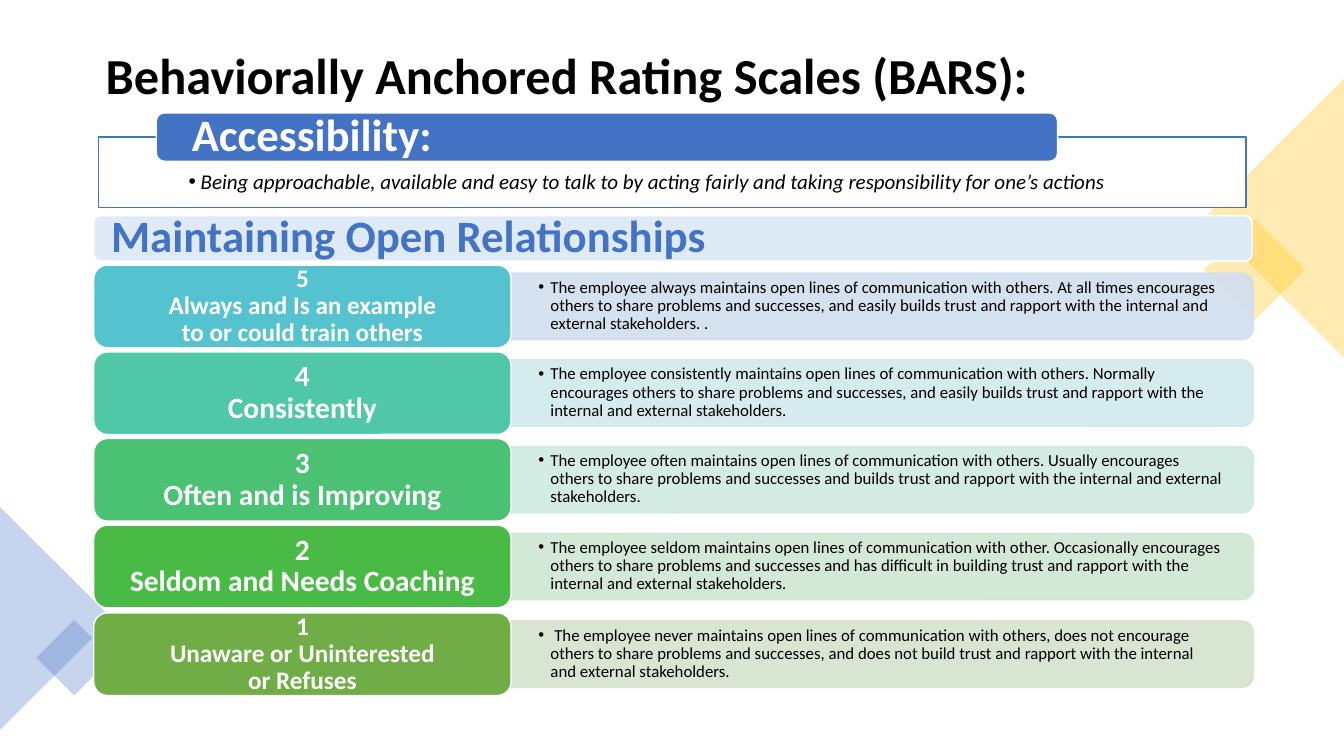
import pptx
import pptx.util
import pptx.dml.color
import pptx.enum.shapes
import pptx.enum.text
import pptx.oxml.ns
from lxml import etree

RGBColor = pptx.dml.color.RGBColor
SHAPE = pptx.enum.shapes.MSO_SHAPE
ALIGN = pptx.enum.text.PP_ALIGN
ANCHOR = pptx.enum.text.MSO_ANCHOR
qn = pptx.oxml.ns.qn

PX = 9144  # 100 px to the inch
FONT = "Calibri"

BLACK = RGBColor(0x00, 0x00, 0x00)
WHITE = RGBColor(0xFF, 0xFF, 0xFF)
BLUE = RGBColor(0x44, 0x72, 0xC4)
PALE_BLUE = RGBColor(0xDE, 0xEB, 0xF7)
GOLD = RGBColor(0xFF, 0xC0, 0x00)

# label colour, bar colour, label size, label lines, description
RATINGS = [
    (RGBColor(0x55, 0xC3, 0xCF), RGBColor(0xD2, 0xDE, 0xEF), 18,
     ["5", "Always and Is an example", "to or could train others"],
     "The employee always maintains open lines of communication with others. "
     "At all times encourages others to share problems and successes, and easily "
     "builds trust and rapport with the internal and external stakeholders. ."),
    (RGBColor(0x50, 0xC8, 0xA7), RGBColor(0xD1, 0xE9, 0xED), 21,
     ["4", "Consistently"],
     "The employee consistently maintains open lines of communication with others. "
     "Normally encourages others to share problems and successes, and easily "
     "builds trust and rapport with the internal and external stakeholders."),
    (RGBColor(0x4B, 0xC1, 0x74), RGBColor(0xD0, 0xEA, 0xE1), 21,
     ["3", "Often and is Improving"],
     "The employee often maintains open lines of communication with others. "
     "Usually encourages others to share problems and successes and "
     "builds trust and rapport with the internal and external stakeholders."),
    (RGBColor(0x4A, 0xBA, 0x46), RGBColor(0xD0, 0xE6, 0xD4), 21,
     ["2", "Seldom and Needs Coaching"],
     "The employee seldom maintains open lines of communication with other. "
     "Occasionally encourages others to share problems and successes and has difficult "
     "in building trust and rapport with the internal and external stakeholders."),
    (RGBColor(0x70, 0xAD, 0x47), RGBColor(0xD5, 0xE3, 0xCF), 18,
     ["1", "Unaware or Uninterested", "or Refuses"],
     " The employee never maintains open lines of communication with others, "
     "does not encourage others to share problems and successes, and does not "
     "build trust and rapport with the internal and external stakeholders."),
]


def emu(*lengths):
    return [pptx.util.Emu(length * PX) for length in lengths]


def set_opacity(fill_parent, percent):
    for colour in fill_parent.iter(qn("a:srgbClr")):
        etree.SubElement(colour, qn("a:alpha"), val=str(percent * 1000))


def add_shape(slide, kind, box, fill, line=None, opacity=100, rotation=0):
    shape = slide.shapes.add_shape(kind, *emu(*box))
    shape.shadow.inherit = False
    shape.rotation = rotation
    shape.fill.solid()
    shape.fill.fore_color.rgb = fill
    if opacity < 100:
        set_opacity(shape.fill._xPr, opacity)
    if line is None:
        shape.line.fill.background()
    else:
        shape.line.color.rgb = line
        shape.line.width = pptx.util.Pt(1)
    return shape


def add_bullet(paragraph):
    properties = paragraph._p.get_or_add_pPr()
    properties.set("marL", str(12 * PX))
    properties.set("indent", str(-12 * PX))
    etree.SubElement(properties, qn("a:buFont"), typeface="Arial")
    etree.SubElement(properties, qn("a:buChar"), char="•")


def write(shape, lines, size, colour, margins, bold=False, italic=False,
          bullet=False, align=ALIGN.LEFT, anchor=ANCHOR.MIDDLE):
    """Fill a shape with one paragraph a line; margins are (sides, top, bottom)."""
    frame = shape.text_frame
    frame.word_wrap = True
    frame.vertical_anchor = anchor
    sides, top, bottom = emu(*margins)
    frame.margin_left = frame.margin_right = sides
    frame.margin_top, frame.margin_bottom = top, bottom
    for index, line in enumerate(lines):
        paragraph = frame.add_paragraph() if index else frame.paragraphs[0]
        paragraph.alignment = align
        paragraph.line_spacing = 0.9
        if bullet:
            add_bullet(paragraph)
        run = paragraph.add_run()
        run.text = line
        run.font.name = FONT
        run.font.size = pptx.util.Pt(size)
        run.font.bold = bold
        run.font.italic = italic
        run.font.color.rgb = colour


def add_title(slide, box):
    title = slide.shapes.add_textbox(*emu(*box))
    write(title, ["Behaviorally Anchored Rating Scales (BARS):"], 36, BLACK,
          (10, 5, 5), bold=True)


def add_corner_decoration(slide, triangle, diamond, colour, rotation):
    add_shape(slide, SHAPE.ISOSCELES_TRIANGLE, triangle, colour, opacity=30, rotation=rotation)
    add_shape(slide, SHAPE.RECTANGLE, diamond, colour, opacity=30, rotation=45)


def add_section_heading(slide, box):
    heading = add_shape(slide, SHAPE.ROUNDED_RECTANGLE, box, PALE_BLUE, WHITE)
    write(heading, ["Maintaining Open Relationships"], 32, BLUE, (15, 9, 9), bold=True)


def add_rating(slide, box, rating):
    label_colour, bar_colour, size, label_lines, description = rating
    left, top, width, height = box
    label_width, bar_inset = 414, 8
    bar_left = left + label_width
    bar_length, bar_height = width - label_width, height - 2 * bar_inset

    # The bar is a turned shape, so its rounded end faces right.
    shift = (bar_length - bar_height) // 2
    bar = add_shape(slide, SHAPE.ROUND_2_SAME_RECTANGLE,
                    (bar_left + shift, top + bar_inset - shift, bar_height, bar_length),
                    bar_colour, bar_colour, opacity=90, rotation=90)
    set_opacity(bar.line.fill._xPr, 90)

    text = slide.shapes.add_textbox(*emu(bar_left, top + 11, bar_length - 3, height - 23))
    write(text, [description], 12, BLACK, (27, 14, 14), bullet=True)

    label = add_shape(slide, SHAPE.ROUNDED_RECTANGLE, (left, top, label_width, height),
                      label_colour, WHITE)
    write(label, label_lines, size, WHITE, (11, 8, 8), bold=True, align=ALIGN.CENTER)


def add_rating_scale(slide, box):
    left, top, width, height = box
    row_height = 82
    for index, rating in enumerate(RATINGS):
        offset = index * (height - row_height) // (len(RATINGS) - 1)
        add_rating(slide, (left, top + offset, width, row_height), rating)


def add_definition(slide, box):
    left, top, width, height = box
    frame = add_shape(slide, SHAPE.RECTANGLE, box, WHITE, BLUE, opacity=90)
    write(frame, ["Being approachable, available and easy to talk to by acting fairly "
                  "and taking responsibility for one’s actions"],
          15, BLACK, (89, 34, 12), italic=True, bullet=True, anchor=ANCHOR.TOP)
    tab = add_shape(slide, SHAPE.ROUNDED_RECTANGLE, (left + 57, top - 24, 894, 48), BLUE, WHITE)
    write(tab, ["Accessibility:"], 32, WHITE, (33, 2, 2), bold=True)


def main():
    presentation = pptx.Presentation()
    presentation.slide_width, presentation.slide_height = emu(1333, 750)
    slide = presentation.slides.add_slide(presentation.slide_layouts[6])
    add_title(slide, (95, 16, 1152, 124))
    add_corner_decoration(slide, (1125, 147, 277, 139), (1209, 232, 71, 71), GOLD, 270)
    add_corner_decoration(slide, (-55, 558, 221, 111), (47, 626, 53, 53), BLUE, 90)
    add_section_heading(slide, (93, 214, 1149, 45))
    add_rating_scale(slide, (93, 263, 1150, 427))
    add_definition(slide, (98, 136, 1138, 70))
    presentation.save("out.pptx")


if __name__ == "__main__":
    main()
